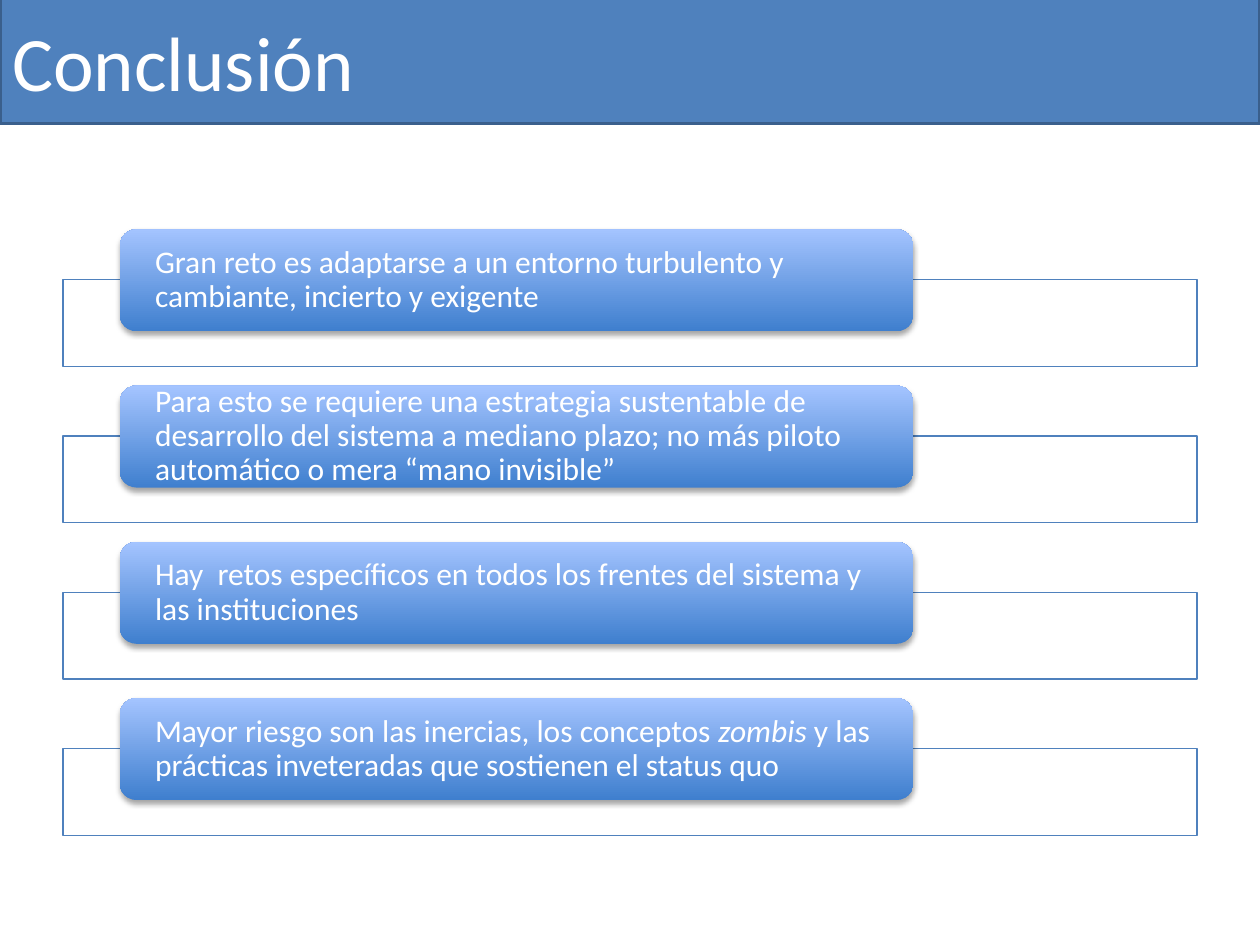
from lxml import etree
from pptx import Presentation, util as u
from pptx.dml.color import RGBColor
from pptx.enum import shapes, text
from pptx.oxml import ns

COLORS = {
    "blue": "4F81BD", "border": "3A5F8C", "white": "FFFFFF",
    "grad_dark": "3F7FCE", "grad_light": "A4C4FF", "shadow": "000000",
}
FONT = "Calibri"
# Each conclusion is a list of (text, italic) runs
CONCLUSIONS = [
    [("Gran reto es adaptarse a un entorno turbulento y cambiante, incierto y exigente", False)],
    [("Para esto se requiere una estrategia sustentable de desarrollo del sistema a mediano "
      "plazo; no más piloto automático o mera “mano invisible”", False)],
    [("Hay  retos específicos en todos los frentes del sistema y las instituciones", False)],
    [("Mayor riesgo son las inercias, los conceptos ", False), ("zombis", True),
     (" y las prácticas inveteradas que sostienen el status quo", False)],
]


def rgb(name):
    return RGBColor.from_string(COLORS[name])


def add_box(s, kind, left, top, width, height, fill=None, line=None, line_width=0):
    sp = s.shapes.add_shape(kind, u.Inches(left), u.Inches(top), u.Inches(width), u.Inches(height))
    sp.shadow.inherit = False
    if fill:
        sp.fill.solid()
        sp.fill.fore_color.rgb = rgb(fill)
    if line:
        sp.line.color.rgb = rgb(line)
        sp.line.width = u.Pt(line_width)
    else:
        sp.line.fill.background()
    return sp


def write(tf, runs, size):
    tf.word_wrap = True
    tf.vertical_anchor = text.MSO_ANCHOR.MIDDLE
    p = tf.paragraphs[0]
    p.alignment = text.PP_ALIGN.LEFT
    p.font.size = u.Pt(size)
    p.font.name = FONT
    p.font.color.rgb = rgb("white")
    for content, italic in runs:
        r = p.add_run()
        r.text = content
        # Runs carry the look too, so it holds over the shape style
        r.font.size, r.font.name = u.Pt(size), FONT
        r.font.color.rgb = rgb("white")
        if italic:
            r.font.italic = True
    return p


def set_alpha(color, percent):
    etree.SubElement(color, ns.qn("a:alpha"), val=str(percent * 1000))


def add_soft_shadow(sp):
    effects = sp._element.spPr.find(ns.qn("a:effectLst"))
    shadow = etree.SubElement(
        effects, ns.qn("a:outerShdw"), blurRad=str(u.Pt(3.1)), dist=str(u.Pt(1.8)),
        dir="5400000", rotWithShape="0")
    set_alpha(etree.SubElement(shadow, ns.qn("a:srgbClr"), val=COLORS["shadow"]), 35)


def title_band(s, left, top, width, height):
    sp = add_box(s, shapes.MSO_SHAPE.RECTANGLE, left, top, width, height, "blue", "border", 2)
    write(sp.text_frame, [("Conclusión", False)], 44)


def conclusion(s, left, top, width, runs):
    # Outlined frame behind the label
    frame = add_box(s, shapes.MSO_SHAPE.RECTANGLE, left, top + 0.4, width, 0.69,
                    "white", "blue", 0.75)
    set_alpha(frame._element.spPr.find(ns.qn("a:solidFill"))[0], 90)

    # Gradient label
    label_left, label_width, label_height = left + 0.45, width * 0.7, 0.81
    label = add_box(s, shapes.MSO_SHAPE.ROUNDED_RECTANGLE, label_left, top,
                    label_width, label_height)
    label.fill.gradient()
    label.fill.gradient_angle = 90
    for stop, name in zip(label.fill.gradient_stops, ("grad_dark", "grad_light")):
        stop.color.rgb = rgb(name)
    add_soft_shadow(label)

    # Text, inset from the rounded corners
    inset = 0.04
    box = s.shapes.add_textbox(
        u.Inches(label_left + inset), u.Inches(top + inset),
        u.Inches(label_width - 2 * inset), u.Inches(label_height - 2 * inset))
    tf = box.text_frame
    tf.margin_left = tf.margin_right = u.Inches(0.24)
    tf.margin_top = tf.margin_bottom = 0
    write(tf, runs, 18).line_spacing = 0.9


def conclusion_list(s, left, top, width, pitch):
    for i, runs in enumerate(CONCLUSIONS):
        conclusion(s, left, top + i * pitch, width, runs)


def main():
    prs = Presentation()
    prs.slide_width, prs.slide_height = u.Inches(10), u.Inches(7.5)
    s = prs.slides.add_slide(prs.slide_layouts[6])
    title_band(s, 0, -0.02, 10, 1)
    conclusion_list(s, 0.5, 1.82, 9, 1.24)
    prs.save("out.pptx")


if __name__ == "__main__":
    main()
